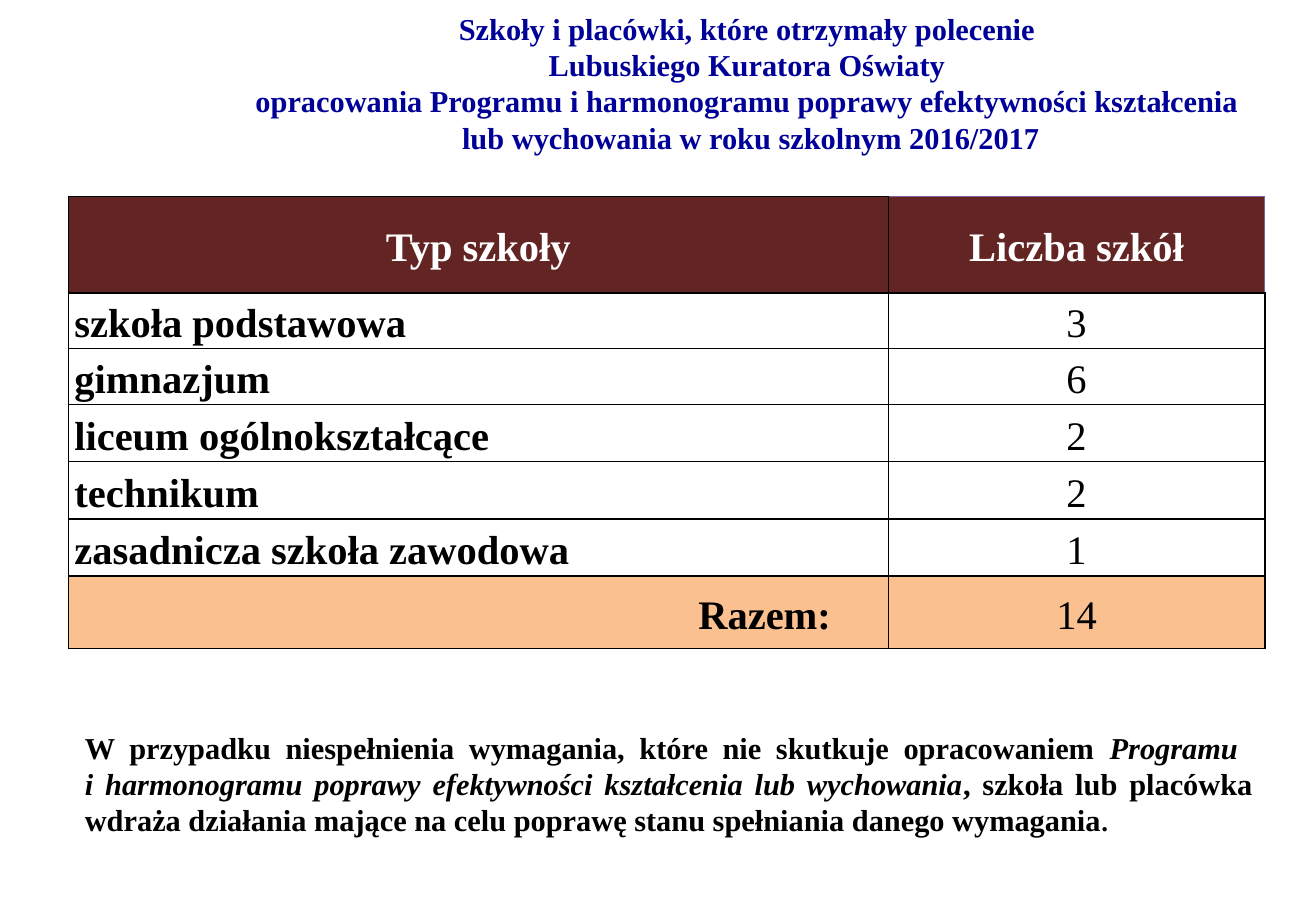
from dataclasses import dataclass

from lxml.etree import SubElement
from pptx import Presentation
from pptx.dml.color import RGBColor
from pptx.enum.text import MSO_ANCHOR as Anchor, PP_ALIGN as Align
from pptx.oxml.ns import qn
from pptx.util import Pt

FONT = "Times New Roman"
NAVY, BLACK, WHITE = "000099", "000000", "FFFFFF"
MAROON, PEACH, VIOLET = "632523", "FAC090", "7D60A0"
CELL_MARGIN = 3.6
TOTAL_INDENT = 34


@dataclass
class Row:
    label: str
    count: str
    height: float
    fill: str | None = None
    color: str = BLACK
    label_align: Align = Align.LEFT
    count_bold: bool = False
    label_margin: float = CELL_MARGIN


ROWS = [
    Row("Typ szkoły", "Liczba szkół", 57, MAROON, WHITE, Align.CENTER, True),
    Row("szkoła podstawowa", "3", 32.4),
    Row("gimnazjum", "6", 32.4),
    Row("liceum ogólnokształcące", "2", 33.9),
    Row("technikum", "2", 33.9),
    Row("zasadnicza szkoła zawodowa", "1", 33.9),
    Row("Razem:", "14", 43, PEACH, label_align=Align.RIGHT, label_margin=TOTAL_INDENT),
]
COLUMN_WIDTHS = (486, 223.2)

TITLE = (
    "Szkoły i placówki, które otrzymały polecenie \n"
    "Lubuskiego Kuratora Oświaty \n"
    "opracowania Programu i harmonogramu poprawy efektywności kształcenia \n"
    "lub wychowania w roku szkolnym 2016/2017"
)


def rgb(color: str) -> RGBColor:
    return RGBColor.from_string(color)


def write(para, text: str, *, size: float = 18, color: str = BLACK,
          bold: bool = True, italic: bool = False) -> None:
    """Append formatted text, turning each newline into a line break."""
    for index, line in enumerate(text.split("\n")):
        if index:
            para.add_line_break()
        span = para.add_run()
        span.text = line
        font = span.font
        font.name, font.size, font.bold, font.italic = FONT, Pt(size), bold, italic
        font.color.rgb = rgb(color)


def add_box(page, left: float, top: float, width: float, height: float,
            align: Align, anchor: Anchor):
    """Add a wrapping text box and return its first paragraph."""
    box = page.shapes.add_textbox(Pt(left), Pt(top), Pt(width), Pt(height))
    frame = box.text_frame
    frame.word_wrap = True
    frame.vertical_anchor = anchor
    para = frame.paragraphs[0]
    para.alignment = align
    return para


def set_border(cell, side: str, color: str, width: float) -> None:
    line = SubElement(cell._tc.get_or_add_tcPr(), qn(f"a:ln{side}"), w=str(Pt(width)))
    solid = SubElement(line, qn("a:solidFill"))
    SubElement(solid, qn("a:srgbClr"), val=color)


def fill_cell(cell, text: str, row: Row, *, align: Align, bold: bool,
              margin_right: float, violet_sides: str = "") -> None:
    for side in "LRTB":
        violet = side in violet_sides
        set_border(cell, side, VIOLET if violet else BLACK, 0.75 if violet else 1)
    if row.fill:
        cell.fill.solid()
        cell.fill.fore_color.rgb = rgb(row.fill)
    else:
        cell.fill.background()
    cell.margin_left, cell.margin_right = Pt(CELL_MARGIN), Pt(margin_right)
    cell.margin_top = cell.margin_bottom = 0
    cell.vertical_anchor = Anchor.MIDDLE
    para = cell.text_frame.paragraphs[0]
    para.alignment = align
    para.line_spacing = 1.15
    write(para, text, size=24, color=row.color, bold=bold)


def add_school_table(page) -> None:
    height = sum(row.height for row in ROWS)
    table = page.shapes.add_table(len(ROWS), len(COLUMN_WIDTHS), Pt(40.5), Pt(116.6),
                                  Pt(sum(COLUMN_WIDTHS)), Pt(height)).table
    table.horz_banding = False
    for column, width in zip(table.columns, COLUMN_WIDTHS):
        column.width = Pt(width)
    for index, row in enumerate(ROWS):
        table.rows[index].height = Pt(row.height)
        fill_cell(table.cell(index, 0), row.label, row, align=row.label_align,
                  bold=True, margin_right=row.label_margin)
        fill_cell(table.cell(index, 1), row.count, row, align=Align.CENTER,
                  bold=row.count_bold, margin_right=CELL_MARGIN,
                  violet_sides="" if index else "RT")


def main() -> None:
    deck = Presentation()
    deck.slide_width, deck.slide_height = Pt(780), Pt(540)
    page = deck.slides.add_slide(deck.slide_layouts[6])

    title = add_box(page, 119.5, 3.6, 651, 90.7, Align.CENTER, Anchor.MIDDLE)
    write(title, TITLE, color=NAVY)

    add_school_table(page)

    note = add_box(page, 43.2, 428.4, 706.3, 72.7, Align.JUSTIFY, Anchor.TOP)
    write(note, "W przypadku niespełnienia wymagania, które nie skutkuje opracowaniem ")
    write(note, "Programu \ni harmonogramu poprawy efektywności kształcenia lub wychowania",
          italic=True)
    write(note, ", szkoła lub placówka wdraża działania mające na celu "
                "poprawę stanu spełniania danego wymagania")
    write(note, ".", size=16)

    deck.save("out.pptx")


if __name__ == "__main__":
    main()
